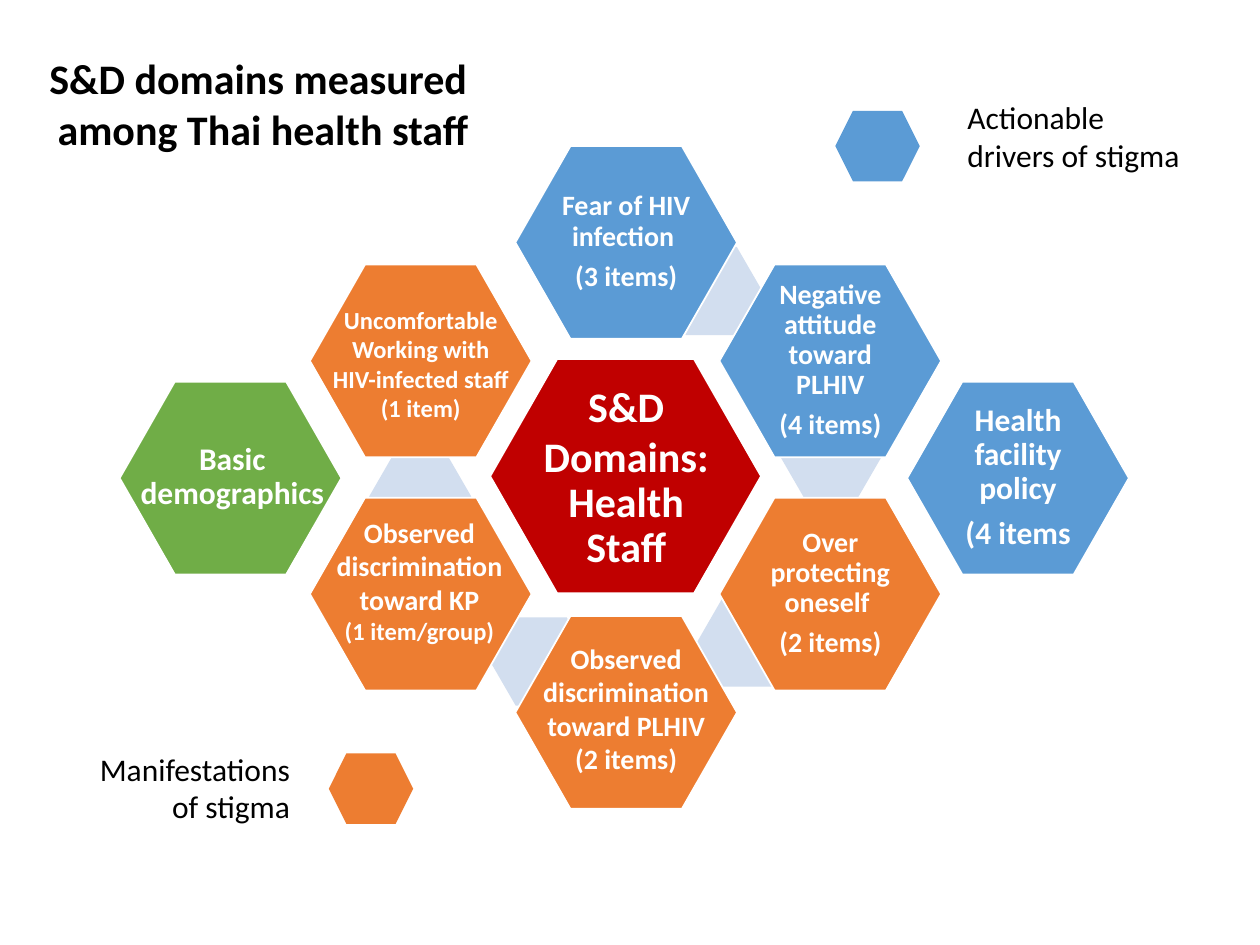
from dataclasses import dataclass

from pptx import Presentation
from pptx import util as u
from pptx.dml.color import RGBColor
from pptx.enum import shapes, text

PX = 9144  # EMU per px, 100 px to the inch


@dataclass(frozen=True)
class Theme:
    font: str = "Calibri"
    black: str = "000000"
    white: str = "FFFFFF"
    red: str = "C00000"
    blue: str = "5B9BD5"
    orange: str = "ED7D31"
    green: str = "70AD47"
    pale: str = "D2DEEF"
    large: int = 24
    medium: int = 18
    body: int = 16
    small: int = 14


T = Theme()
CENTER, LEFT, RIGHT = text.PP_ALIGN.CENTER, text.PP_ALIGN.LEFT, text.PP_ALIGN.RIGHT


class Deck:
    def __init__(self, prs, theme):
        self.theme = theme
        self.s = prs.slides.add_slide(prs.slide_layouts[5])

    def box(self, at):
        return [u.Emu(v * PX) for v in at]

    def add_lines(self, tf, lines, size, color, bold=True, align=CENTER, tight=False):
        """Each line is a string or a (string, size) pair."""
        for i, line in enumerate(lines):
            words, pt = (line, size) if isinstance(line, str) else line
            p = tf.paragraphs[0] if i == 0 else tf.add_paragraph()
            p.alignment = align
            if tight:
                p.line_spacing = 0.9
                p.space_after = u.Pt(pt * 0.35)
            r = p.add_run()
            r.text = words
            f = r.font
            f.name, f.size, f.bold = self.theme.font, u.Pt(pt), bold
            f.color.rgb = RGBColor.from_string(color)

    def title(self, at, lines):
        sp = self.s.shapes.title
        sp.left, sp.top, sp.width, sp.height = self.box(at)
        tf = sp.text_frame
        tf.word_wrap = False
        tf.auto_size = text.MSO_AUTO_SIZE.NONE
        tf.vertical_anchor = text.MSO_ANCHOR.TOP
        self.add_lines(tf, lines, self.theme.large, self.theme.black)

    def hexagon(self, at, fill, adj=0.25, outline=False):
        sp = self.s.shapes.add_shape(shapes.MSO_SHAPE.HEXAGON, *self.box(at))
        sp.adjustments[0] = adj
        sp.shadow.inherit = False
        sp.fill.solid()
        sp.fill.fore_color.rgb = RGBColor.from_string(fill)
        if outline:
            sp.line.color.rgb = RGBColor.from_string(self.theme.white)
            sp.line.width = u.Pt(1)
        else:
            sp.line.fill.background()

    def tile(self, x, y, fill):
        self.hexagon((x, y, 176, 153), fill, 0.286, True)

    def label(self, at, lines, size, inset=2):
        """Text centred inside a hexagon."""
        tf = self.s.shapes.add_textbox(*self.box(at)).text_frame
        tf.word_wrap = True
        tf.vertical_anchor = text.MSO_ANCHOR.MIDDLE
        tf.margin_left = tf.margin_right = u.Emu(inset * PX)
        tf.margin_top = tf.margin_bottom = u.Emu(inset * PX)
        self.add_lines(tf, lines, size, self.theme.white, tight=True)
        return tf

    def note(self, at, lines, size, color, bold=True, align=CENTER, wrap=False):
        tf = self.s.shapes.add_textbox(*self.box(at)).text_frame
        tf.word_wrap = wrap
        self.add_lines(tf, lines, size, color, bold, align)


def main():
    prs = Presentation()
    prs.slide_width, prs.slide_height = u.Inches(10), u.Inches(7.5)
    d = Deck(prs, T)

    d.title((26, 37, 358, 91), ["S&D domains measured", " among Thai health staff"])

    # Centre of the ring
    d.hexagon((389, 285, 215, 186), T.red, 0.286, True)
    tf = d.label((425, 316, 144, 124), ["S&D Domains:", "Health Staff"], T.large, 3)
    tf.paragraphs[0].line_spacing = 1.0
    tf.paragraphs[0].space_after = u.Pt(0)

    # Pale links between neighbouring domains
    for x, y in [(524, 196), (619, 327), (553, 475), (389, 490), (293, 359)]:
        d.hexagon((x, y, 81, 70), T.pale, 0.289)

    # Domains with a label fitted to the hexagon
    labelled = [
        (409, 116, T.blue, T.body, 118, ["Fear of HIV infection ", "(3 items)"]),
        (571, 210, T.blue, T.body, 118, ["Negative attitude toward PLHIV", "(4 items)"]),
        (571, 395, T.orange, T.body, 118, ["Over protecting oneself ", "(2 items)"]),
        (95, 303, T.green, T.medium, 157, ["Basic demographics"]),
        (720, 303, T.blue, T.medium, 118, ["Health facility policy", "(4 items"]),
    ]
    for x, y, fill, size, width, lines in labelled:
        d.tile(x, y, fill)
        # the wide label starts 11 px in, the others are centred
        inset = 11 if width == 157 else (176 - width) // 2
        d.label((x + inset, y + 25, width, 102), lines, size)

    # Domains with free lines of text on top
    free = [
        (409, 489, (419, 504, 156, 145), T.body,
         ["Observed", "discrimination", "toward PLHIV", "(2 items)"]),
        (246, 395, (256, 404, 154, 141), T.body,
         ["Observed", "discrimination", "toward KP", ("(1 item/group)", T.small)]),
        (246, 210, (253, 237, 162, 128), T.small,
         ["Uncomfortable", "Working with", "HIV-infected staff", "(1 item)"]),
    ]
    for x, y, at, size, lines in free:
        d.tile(x, y, T.orange)
        d.note(at, lines, size, T.white)

    # Colour key
    key = [
        (663, 88, T.blue, (758, 73), "Actionable drivers of stigma", LEFT),
        (261, 598, T.orange, (45, 590), "Manifestations of stigma", RIGHT),
    ]
    for x, y, fill, corner, words, align in key:
        d.hexagon((x, y, 67, 56), fill)
        d.note((*corner, 195, 71), [words], T.medium, T.black, False, align, True)

    prs.save("out.pptx")


if __name__ == "__main__":
    main()
